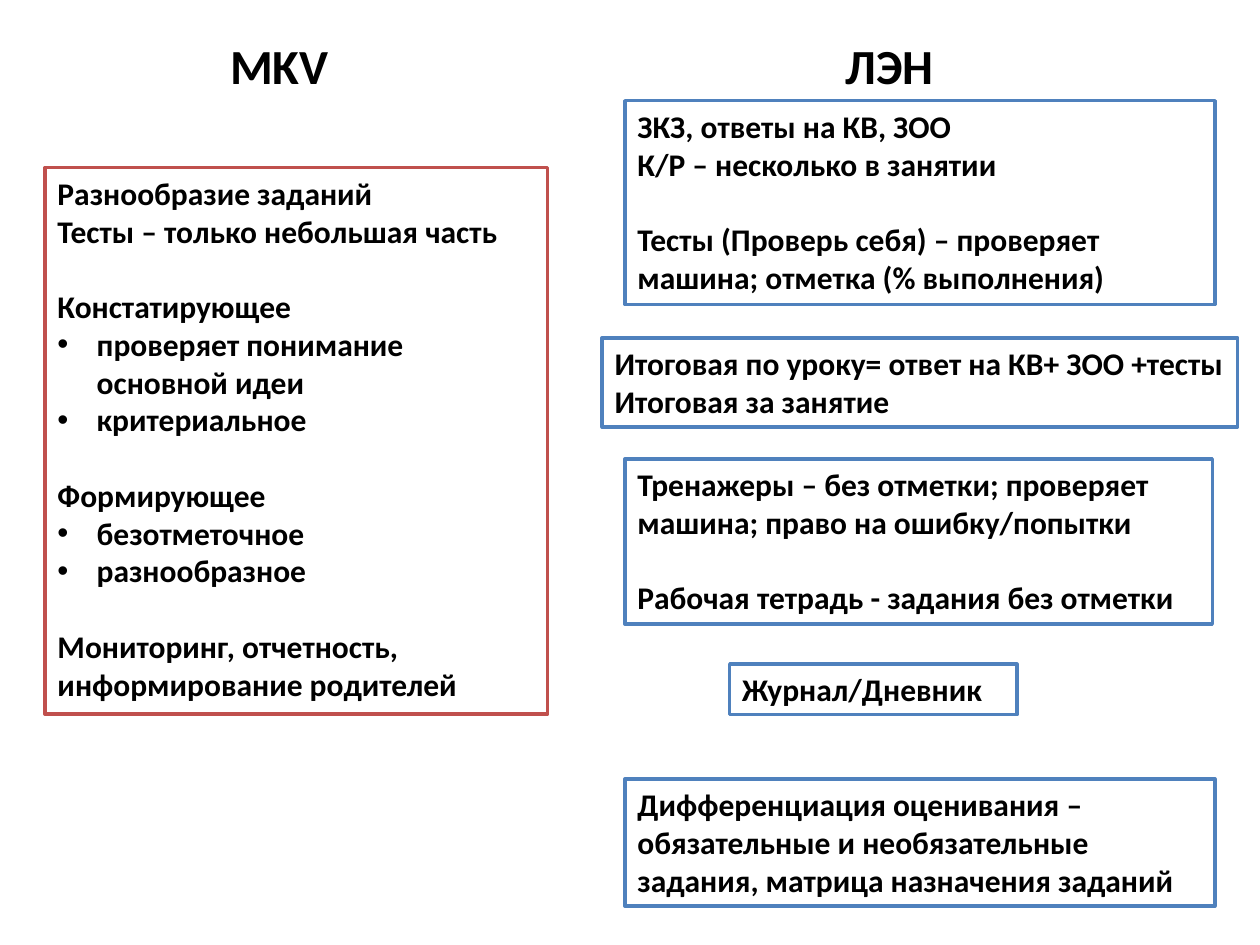
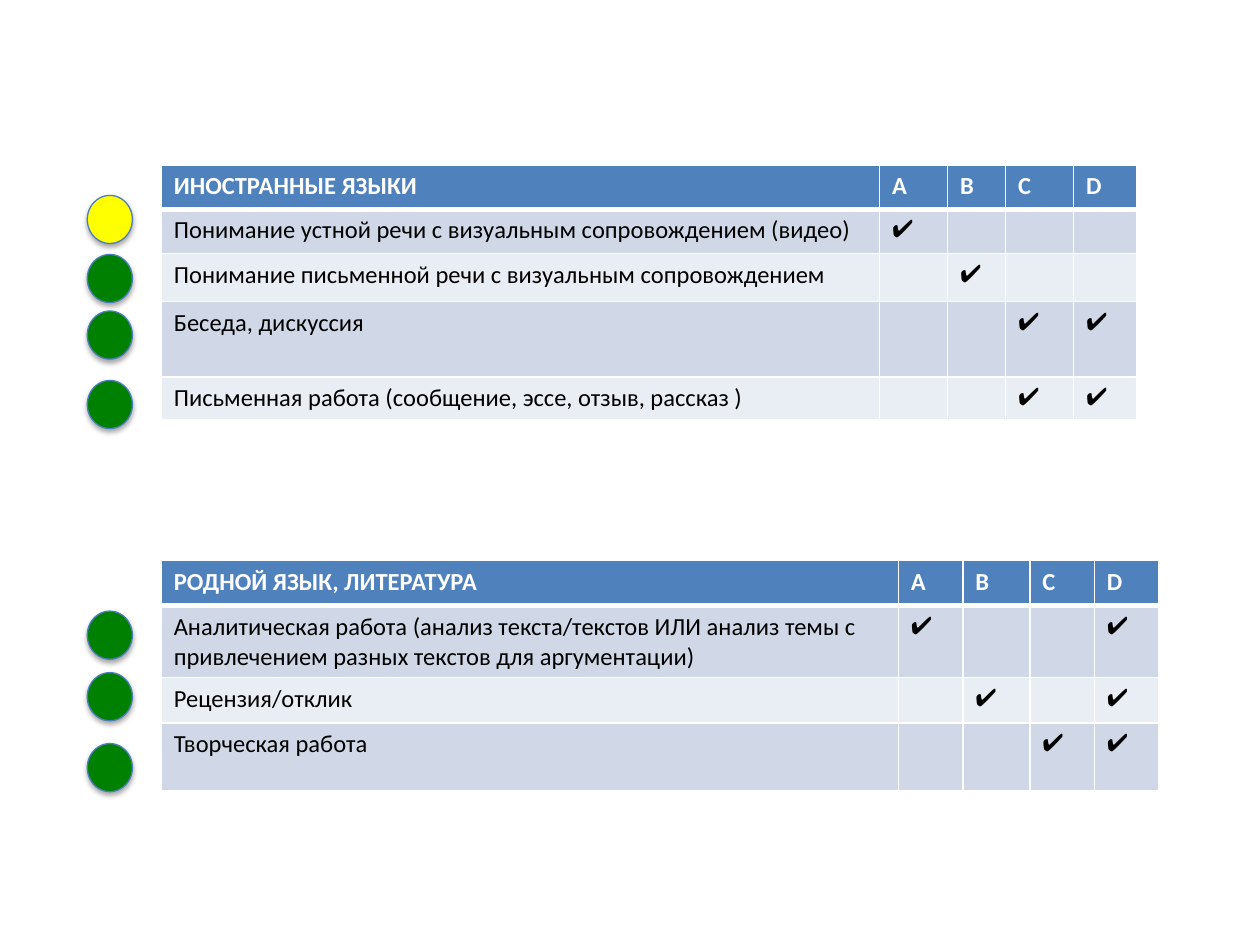
from dataclasses import dataclass
from typing import Any

from lxml import etree
from pptx import Presentation
from pptx.dml.color import RGBColor
from pptx.enum.shapes import MSO_SHAPE
from pptx.enum.text import MSO_ANCHOR, PP_ALIGN
from pptx.oxml.ns import qn
from pptx.util import Cm, Pt

RECTANGLE, OVAL = MSO_SHAPE.RECTANGLE, MSO_SHAPE.OVAL
TOP, LEFT = MSO_ANCHOR.TOP, PP_ALIGN.LEFT

BLACK = RGBColor(0x00, 0x00, 0x00)
WHITE = RGBColor(0xFF, 0xFF, 0xFF)
RED = RGBColor(0xC0, 0x50, 0x4D)
BLUE = RGBColor(0x4F, 0x81, 0xBD)
OUTLINE_BLUE = RGBColor(0x4B, 0x7E, 0xBC)
BAND_DARK = RGBColor(0xD0, 0xD8, 0xE8)
BAND_LIGHT = RGBColor(0xE9, 0xED, 0xF4)
GREEN = RGBColor(0x00, 0x80, 0x00)
YELLOW = RGBColor(0xFF, 0xFF, 0x00)

HEADING = {"name": "Calibri", "size": Pt(28), "bold": True}
BOX_TEXT = {"name": "Calibri", "size": Pt(18), "bold": True}
HEADER_TEXT = {"name": "Calibri", "size": Pt(14), "bold": True}
SKILL_TEXT = {"name": "Calibri", "size": Pt(14), "bold": False}
CHECK_TEXT = {"name": "Arial", "size": Pt(14), "bold": False}

SECTION_GAP = Pt(21.5)
BULLET_INDENT = Cm(0.79)
LEVELS = "ABCD"
CHECK = "✔"
TABLE_LEFT = 3.25
LIGHT_LEFT, LIGHT_WIDTH, LIGHT_HEIGHT = 1.76, 0.91, 0.97


@dataclass
class Line:
    text: str
    bullet: bool = False
    new_section: bool = False


@dataclass
class Box:
    left: float
    top: float
    width: float
    height: float
    lines: list[Line]
    outline: RGBColor = BLUE


@dataclass
class Skill:
    name: str
    levels: str
    height: float
    light_top: float
    light: RGBColor = GREEN


@dataclass
class Subject:
    name: str
    top: float
    header_height: float
    columns: list[float]
    skills: list[Skill]


HEADINGS = {"MKV": 4.39, "ЛЭН": 16.8}

BOXES = [
    Box(0.91, 3.38, 10.13, 11.02, [
        Line("Разнообразие заданий"),
        Line("Тесты – только небольшая часть"),
        Line("Констатирующее", new_section=True),
        Line("проверяет понимание основной идеи", bullet=True),
        Line("критериальное", bullet=True),
        Line("Формирующее", new_section=True),
        Line("безотметочное", bullet=True),
        Line("разнообразное", bullet=True),
        Line("Мониторинг, отчетность, информирование родителей", new_section=True),
    ], RED),
    Box(12.6, 2.03, 11.89, 4.11, [
        Line("ЗКЗ, ответы на КВ, ЗОО"),
        Line("К/Р – несколько в занятии"),
        Line("Тесты (Проверь себя) – проверяет машина; отметка (% выполнения)",
             new_section=True),
    ]),
    Box(12.14, 6.81, 12.81, 1.8, [
        Line("Итоговая по уроку= ответ на КВ+ ЗОО +тесты"),
        Line("Итоговая за занятие"),
    ]),
    Box(12.6, 9.25, 11.84, 3.33, [
        Line("Тренажеры – без отметки; проверяет машина; право на ошибку/попытки"),
        Line("Рабочая тетрадь - задания без отметки", new_section=True),
    ]),
    Box(14.71, 13.39, 5.79, 1.02, [Line("Журнал/Дневник")]),
    Box(12.6, 15.7, 11.89, 2.57, [
        Line("Дифференциация оценивания – обязательные и необязательные задания, "
             "матрица назначения заданий"),
    ]),
]

SUBJECTS = [
    Subject("ИНОСТРАННЫЕ ЯЗЫКИ", 3.33, 0.89, [14.48, 1.37, 1.17, 1.37, 1.27], [
        Skill("Понимание устной речи с визуальным сопровождением (видео)",
              "A", 0.89, 3.94, YELLOW),
        Skill("Понимание письменной речи с визуальным сопровождением",
              "B", 0.97, 5.13),
        Skill("Беседа, дискуссия", "CD", 1.52, 6.27),
        Skill("Письменная работа (сообщение, эссе, отзыв, рассказ )",
              "CD", 0.86, 7.67),
    ]),
    Subject("РОДНОЙ ЯЗЫК, ЛИТЕРАТУРА", 11.3, 0.91, [14.86, 1.3, 1.35, 1.3, 1.3], [
        Skill("Аналитическая работа (анализ текста/текстов ИЛИ анализ темы с "
              "привлечением разных текстов для аргументации)", "AD", 1.45, 12.32),
        Skill("Рецензия/отклик", "BD", 0.91, 13.56),
        Skill("Творческая работа", "CD", 1.37, 14.99),
    ]),
]


def style_font(font: Any, style: dict[str, Any], color: RGBColor) -> None:
    for attribute, value in style.items():
        setattr(font, attribute, value)
    font.color.rgb = color


def add_child(parent: Any, tag: str, **attributes: Any) -> Any:
    values = {key: str(value) for key, value in attributes.items()}
    return etree.SubElement(parent, qn(tag), values)


def add_solid_color(parent: Any, color: RGBColor) -> Any:
    return add_child(parent, "a:srgbClr", val=color)


def add_heading(slide: Any, text: str, left: float) -> None:
    frame = slide.shapes.add_textbox(Cm(left), Cm(0.6), Cm(4), Cm(1.45)).text_frame
    frame.word_wrap = True
    frame.text = text
    style_font(frame.paragraphs[0].runs[0].font, HEADING, BLACK)


def add_outlined(slide: Any, kind: Any, place: tuple[float, ...], fill: RGBColor,
                 outline: RGBColor, weight: float) -> Any:
    shape = slide.shapes.add_shape(kind, *map(Cm, place))
    shape.shadow.inherit = False
    shape.fill.solid()
    shape.fill.fore_color.rgb = fill
    shape.line.color.rgb = outline
    shape.line.width = Pt(weight)
    return shape


def add_box(slide: Any, box: Box) -> None:
    place = (box.left, box.top, box.width, box.height)
    frame = add_outlined(slide, RECTANGLE, place, WHITE, box.outline, 2).text_frame
    frame.word_wrap = True
    frame.vertical_anchor = TOP
    for index, line in enumerate(box.lines):
        paragraph = frame.add_paragraph() if index else frame.paragraphs[0]
        paragraph.alignment = LEFT
        if line.new_section:
            paragraph.space_before = SECTION_GAP
        if line.bullet:
            properties = paragraph._p.get_or_add_pPr()
            properties.set("marL", str(BULLET_INDENT))
            properties.set("indent", str(-BULLET_INDENT))
            add_child(properties, "a:buFont", typeface="Arial")
            add_child(properties, "a:buChar", char="•")
        run = paragraph.add_run()
        run.text = line.text
        style_font(run.font, BOX_TEXT, BLACK)


def add_light(slide: Any, skill: Skill) -> None:
    place = (LIGHT_LEFT, skill.light_top, LIGHT_WIDTH, LIGHT_HEIGHT)
    light = add_outlined(slide, OVAL, place, skill.light, OUTLINE_BLUE, 0.75)
    effects = light._element.spPr.find(qn("a:effectLst"))
    shadow = add_child(effects, "a:outerShdw", blurRad=Pt(3.1), dist=Pt(1.8),
                       dir=90 * 60000, rotWithShape=0)
    add_child(add_solid_color(shadow, BLACK), "a:alpha", val=35000)


def fill_cell(cell: Any, text: str, style: dict[str, Any], color: RGBColor,
              fill: RGBColor, row: int) -> None:
    # The rule under the header row is thicker than the others
    weights = {"L": 1, "R": 1, "T": 3 if row == 1 else 1, "B": 3 if row == 0 else 1}
    properties = cell._tc.get_or_add_tcPr()
    for side, weight in weights.items():
        border = add_child(properties, f"a:ln{side}", w=Pt(weight))
        add_solid_color(add_child(border, "a:solidFill"), WHITE)
    cell.fill.solid()
    cell.fill.fore_color.rgb = fill
    cell.text = text
    paragraph = cell.text_frame.paragraphs[0]
    if text:
        style_font(paragraph.runs[0].font, style, color)
    else:
        add_child(paragraph._p, "a:endParaRPr", sz=1400)


def add_subject(slide: Any, subject: Subject) -> None:
    heights = [subject.header_height] + [skill.height for skill in subject.skills]
    table = slide.shapes.add_table(
        len(heights), len(subject.columns), Cm(TABLE_LEFT), Cm(subject.top),
        Cm(sum(subject.columns)), Cm(sum(heights))).table
    for column, width in zip(table.columns, subject.columns):
        column.width = Cm(width)
    for row, height in zip(table.rows, heights):
        row.height = Cm(height)

    for column, title in enumerate([subject.name, *LEVELS]):
        fill_cell(table.cell(0, column), title, HEADER_TEXT, WHITE, BLUE, 0)
    for row, skill in enumerate(subject.skills, 1):
        band = BAND_DARK if row % 2 else BAND_LIGHT
        fill_cell(table.cell(row, 0), skill.name, SKILL_TEXT, BLACK, band, row)
        for column, level in enumerate(LEVELS, 1):
            mark = CHECK if level in skill.levels else ""
            fill_cell(table.cell(row, column), mark, CHECK_TEXT, BLACK, band, row)
        add_light(slide, skill)


def main() -> None:
    deck = Presentation()
    deck.slide_width, deck.slide_height = Cm(25.4), Cm(19.05)
    blank = deck.slide_layouts[6]

    # Comparison of the two assessment systems
    comparison = deck.slides.add_slide(blank)
    for text, left in HEADINGS.items():
        add_heading(comparison, text, left)
    for box in BOXES:
        add_box(comparison, box)

    # Criteria by subject, with a status light for each skill
    criteria = deck.slides.add_slide(blank)
    for subject in SUBJECTS:
        add_subject(criteria, subject)

    deck.save("out.pptx")


if __name__ == "__main__":
    main()
